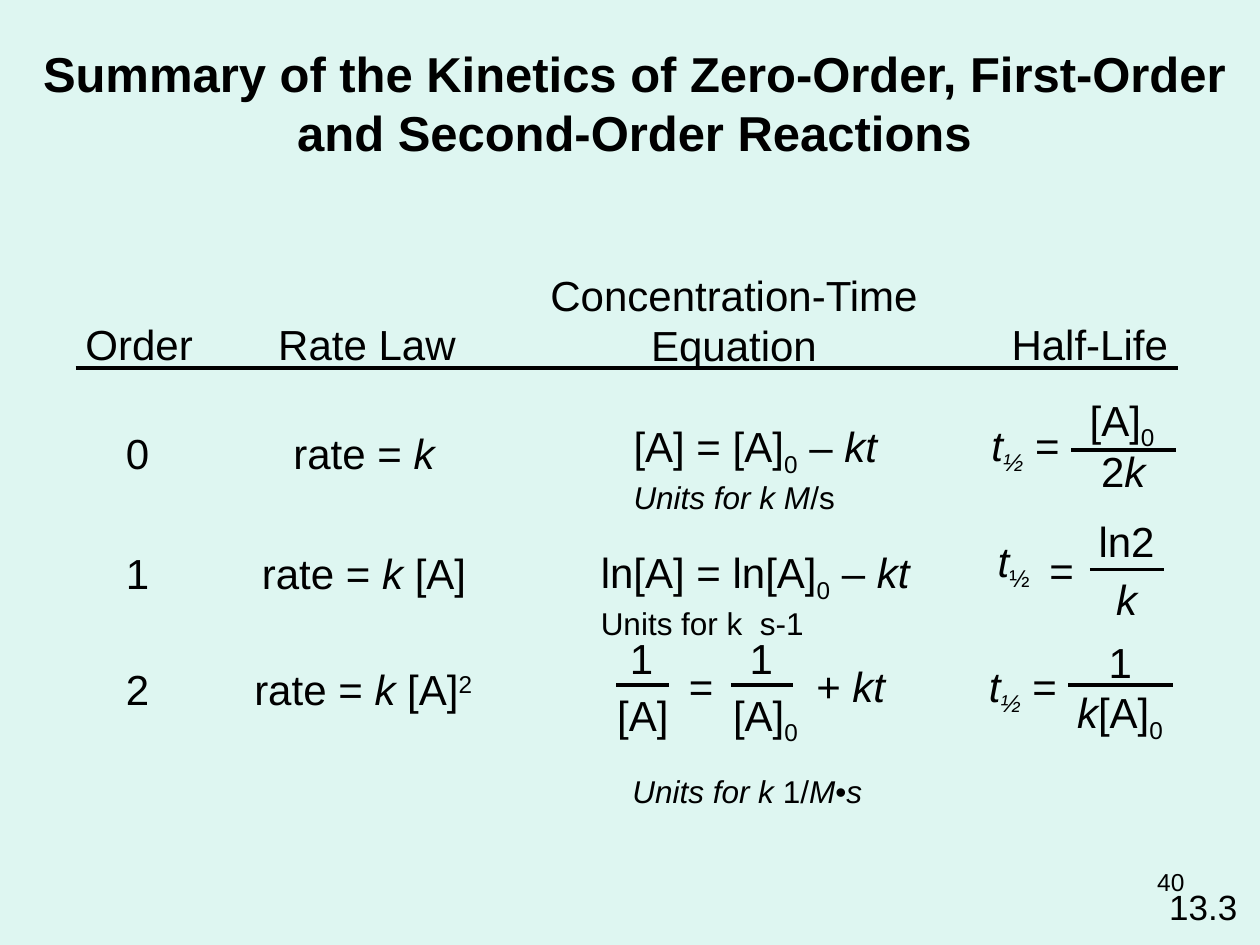
from lxml.etree import SubElement
from pptx import Presentation
from pptx.dml.color import RGBColor
from pptx.enum.shapes import MSO_CONNECTOR
from pptx.enum.text import MSO_AUTO_SIZE, PP_ALIGN
from pptx.oxml.ns import qn
from pptx.util import Inches, Pt

BACKGROUND = RGBColor(0xDE, 0xF6, 0xF1)
BLACK = RGBColor(0, 0, 0)
FONT = "Arial"
BODY_SIZE, UNITS_SIZE = 24, 18
LINE_HEIGHT = 0.5
SUBSCRIPT, SUPERSCRIPT = -25, 30


def italic(text):
    return text, {"italic": True}


def subscript(text, slanted=False):
    return text, {"italic": slanted, "baseline": SUBSCRIPT}


def superscript(text):
    return text, {"baseline": SUPERSCRIPT}


def add_run(paragraph, part, size, bold):
    """Add a plain string or a (text, format) pair as one run."""
    text, style = (part, {}) if isinstance(part, str) else part
    run = paragraph.add_run()
    run.text = text
    font_format = {"name": FONT, "size": Pt(size), "bold": bold,
                   "italic": style.get("italic", False)}
    for name, value in font_format.items():
        setattr(run.font, name, value)
    run.font.color.rgb = BLACK
    if "baseline" in style:
        run.font._element.set("baseline", str(style["baseline"] * 1000))


def add_text(shapes, left, top, width, *lines, height=LINE_HEIGHT, size=BODY_SIZE,
             align=PP_ALIGN.LEFT, bold=False, wrap=False):
    """Add a text box; each line is a string or a list of run parts.

    A line may also be a (parts, size) pair when its size differs.
    """
    box = shapes.add_textbox(Inches(left), Inches(top), Inches(width), Inches(height))
    frame = box.text_frame
    frame.word_wrap = wrap
    frame.auto_size = MSO_AUTO_SIZE.NONE
    for index, line in enumerate(lines):
        paragraph = frame.paragraphs[0] if index == 0 else frame.add_paragraph()
        paragraph.alignment = align
        parts, line_size = line if isinstance(line, tuple) else (line, size)
        for part in [parts] if isinstance(parts, str) else parts:
            add_run(paragraph, part, line_size, bold)


def add_rule(shapes, left, right, y):
    rule = shapes.add_connector(MSO_CONNECTOR.STRAIGHT, Inches(left), Inches(y),
                                Inches(right), Inches(y))
    rule.line.color.rgb = BLACK
    rule.line.width = Pt(2.25)
    SubElement(rule._element.spPr, qn("a:effectLst"))


def add_fraction(shapes, numerator, denominator, bar):
    """Each term is (left, top, width, parts); bar is (left, right, y)."""
    add_text(shapes, *numerator)
    add_text(shapes, *denominator)
    add_rule(shapes, *bar)


def add_headings(slide):
    shapes = slide.shapes.add_group_shape().shapes
    for left, width, heading in [(0.58, 1.05, "Order"), (2.11, 1.61, "Rate Law"),
                                 (7.93, 1.44, "Half-Life")]:
        add_text(shapes, left, 2.48, width, heading)
    add_text(shapes, 4.2, 2.09, 3.25, "Concentration-Time Equation",
             height=0.9, align=PP_ALIGN.CENTER, wrap=True)
    add_rule(shapes, 0.6, 9.35, 2.92)


def add_orders_and_rate_laws(slide):
    rows = [
        ("0", 3.34, 2.23, 1.32, ["rate = ", italic("k")]),
        ("1", 4.3, 1.98, 1.82, ["rate = ", italic("k "), "[A]"]),
        ("2", 5.22, 1.92, 1.94, ["rate = ", italic("k "), "[A]", superscript("2")]),
    ]
    for order, top, left, width, rate_law in rows:
        add_text(slide.shapes, 0.9, top, 0.39, order)
        add_text(slide.shapes, left, top, width, rate_law)


def add_concentration_equations(slide):
    decay = [subscript("0"), " – ", italic("kt")]
    add_text(slide.shapes, 4.93, 3.29, 2.14, ["[A] = [A]", *decay],
             ([italic("Units for k M"), "/s"], UNITS_SIZE), height=1.2)
    add_text(slide.shapes, 4.67, 4.29, 2.66, ["ln[A] = ln[A]", *decay],
             ("Units for k  s-1", UNITS_SIZE), height=1.8)

    shapes = slide.shapes.add_group_shape().shapes
    add_fraction(shapes, (4.9, 4.97, 0.39, "1"), (4.8, 5.42, 0.61, "[A]"),
                 (4.89, 5.31, 5.44))
    add_text(shapes, 5.37, 5.19, 0.4, "=")
    add_fraction(shapes, (5.85, 4.97, 0.39, "1"),
                 (5.72, 5.42, 0.73, ["[A]", subscript("0")]), (5.8, 6.29, 5.44))
    add_text(shapes, 6.38, 5.19, 0.75, ["+ ", italic("kt")])
    add_text(slide.shapes, 4.92, 6.08, 2.02,
             [italic("Units for k "), "1/", italic("M"), "•", italic("s")],
             height=0.4, size=UNITS_SIZE)


def add_half_lives(slide):
    half_life = [italic("t"), subscript("½", slanted=True), " ="]

    zero_order = slide.shapes.add_group_shape().shapes
    add_text(zero_order, 7.77, 3.28, 0.77, half_life)
    add_fraction(zero_order, (8.55, 3.08, 0.73, ["[A]", subscript("0")]),
                 (8.64, 3.49, 0.55, ["2", italic("k")]), (8.5, 9.33, 3.57))

    first_order = slide.shapes.add_group_shape().shapes
    add_text(first_order, 7.82, 4.2, 0.48, [italic("t"), subscript("½")])
    add_text(first_order, 8.23, 4.27, 0.4, "=")
    add_fraction(first_order, (8.62, 4.04, 0.65, "ln2"),
                 (8.76, 4.5, 0.37, [italic("k")]), (8.65, 9.24, 4.52))

    second_order = slide.shapes.add_group_shape().shapes
    add_text(second_order, 7.75, 5.19, 0.77, half_life)
    add_fraction(second_order, (8.7, 5, 0.39, "1"),
                 (8.45, 5.4, 0.9, [italic("k"), "[A]", subscript("0")]),
                 (8.48, 9.31, 5.44))


def main():
    presentation = Presentation()
    presentation.slide_width, presentation.slide_height = Inches(10), Inches(7.5)
    slide = presentation.slides.add_slide(presentation.slide_layouts[6])
    slide.background.fill.solid()
    slide.background.fill.fore_color.rgb = BACKGROUND

    add_text(slide.shapes, 0.22, 0.3, 9.63,
             "Summary of the Kinetics of Zero-Order, First-Order",
             "and Second-Order Reactions",
             height=1.03, size=28, align=PP_ALIGN.CENTER, bold=True)
    add_headings(slide)
    add_orders_and_rate_laws(slide)
    add_concentration_equations(slide)
    add_half_lives(slide)
    add_text(slide.shapes, 7.17, 6.83, 2.33, "40", height=0.52, size=14,
             align=PP_ALIGN.RIGHT, wrap=True)
    add_text(slide.shapes, 9.18, 6.98, 0.74, "13.3", height=0.43, size=20,
             align=PP_ALIGN.RIGHT)
    presentation.save("out.pptx")


if __name__ == "__main__":
    main()
